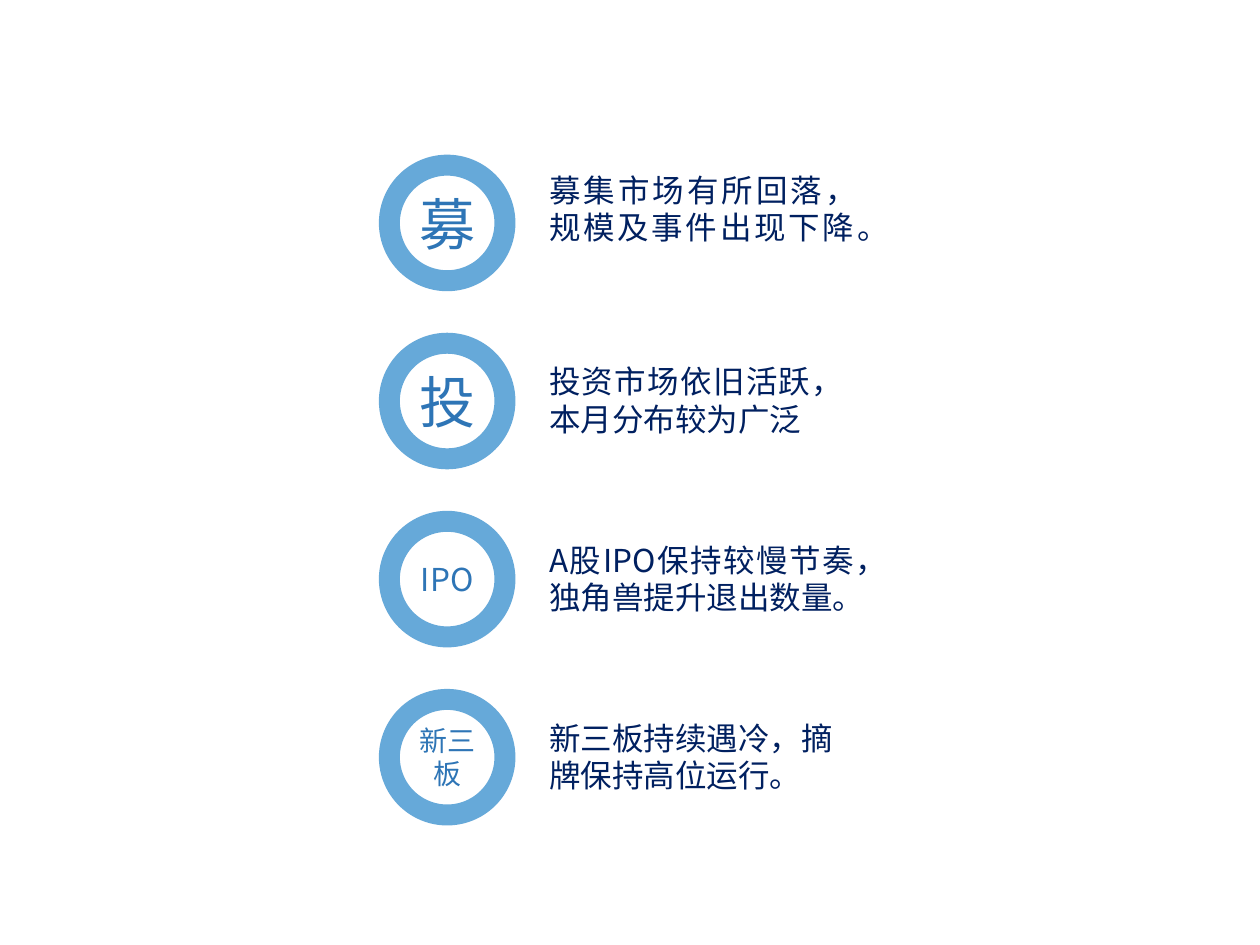
"""Build a slide of four ringed labels, each with a market summary beside it."""
from lxml import etree
from pptx import Presentation
from pptx.dml.color import RGBColor
from pptx.enum.shapes import MSO_SHAPE
from pptx.enum.text import MSO_ANCHOR, MSO_AUTO_SIZE, PP_ALIGN
from pptx.oxml.ns import qn
from pptx.util import Cm, Pt

OVAL = MSO_SHAPE.OVAL
MIDDLE, TOP = MSO_ANCHOR.MIDDLE, MSO_ANCHOR.TOP
CENTER, JUSTIFY = PP_ALIGN.CENTER, PP_ALIGN.JUSTIFY
GROW = MSO_AUTO_SIZE.SHAPE_TO_FIT_TEXT
RING = RGBColor(0x00, 0x70, 0xC0)
LABEL = RGBColor(0x2E, 0x75, 0xB6)
NAVY = RGBColor(0x00, 0x20, 0x60)
RING_LEFT, RING_TOP, RING_SIZE, PITCH = 7.85, 3.33, 2.33, 3.59
TEXT_LEFT, TEXT_HEIGHT = 10.82, 1.8
ROWS = [
    ("募", 32, "募集市场有所回落，规模及事件出现下降。", 6.71, 0),
    ("投", 32, "投资市场依旧活跃，本月分布较为广泛", 6.43, 0.27),
    ("IPO", 18, "A股IPO保持较慢节奏，独角兽提升退出数量。", 7.32, 0.27),
    ("新三板", 16, "新三板持续遇冷，摘牌保持高位运行。", 6.22, 0.27),
]


def write(shape, text, size, font, color, align, anchor):
    tf = shape.text_frame
    tf.word_wrap = True
    tf.vertical_anchor = anchor
    p = tf.paragraphs[0]
    p.text = text
    p.alignment = align
    p.line_spacing = Pt(round(size * 1.19, 1))
    p.font.size = Pt(size)
    p.font.color.rgb = color
    p.font.name = font
    props = p._p.pPr.find(qn("a:defRPr"))
    etree.SubElement(props, qn("a:ea"), typeface=font)


prs = Presentation()
prs.slide_width, prs.slide_height = Cm(25.4), Cm(19.05)
s = prs.slides.add_slide(prs.slide_layouts[6])

for i, (label, size, summary, width, drop) in enumerate(ROWS):
    top = RING_TOP + i * PITCH
    ring = s.shapes.add_shape(OVAL, Cm(RING_LEFT), Cm(top), Cm(RING_SIZE), Cm(RING_SIZE))
    ring.shadow.inherit = False
    ring.fill.background()
    ring.line.color.rgb = RING
    ring.line.width = Pt(12)
    clr = ring.line._ln.find(".//" + qn("a:srgbClr"))
    etree.SubElement(clr, qn("a:alpha"), val="60000")
    write(ring, label, size, "Noto Sans CJK JP", LABEL, CENTER, MIDDLE)

    box = s.shapes.add_textbox(Cm(TEXT_LEFT), Cm(top + drop), Cm(width), Cm(TEXT_HEIGHT))
    write(box, summary, 18, "Noto Sans CJK SC", NAVY, JUSTIFY, TOP)
    box.text_frame.auto_size = GROW

prs.save("out.pptx")
